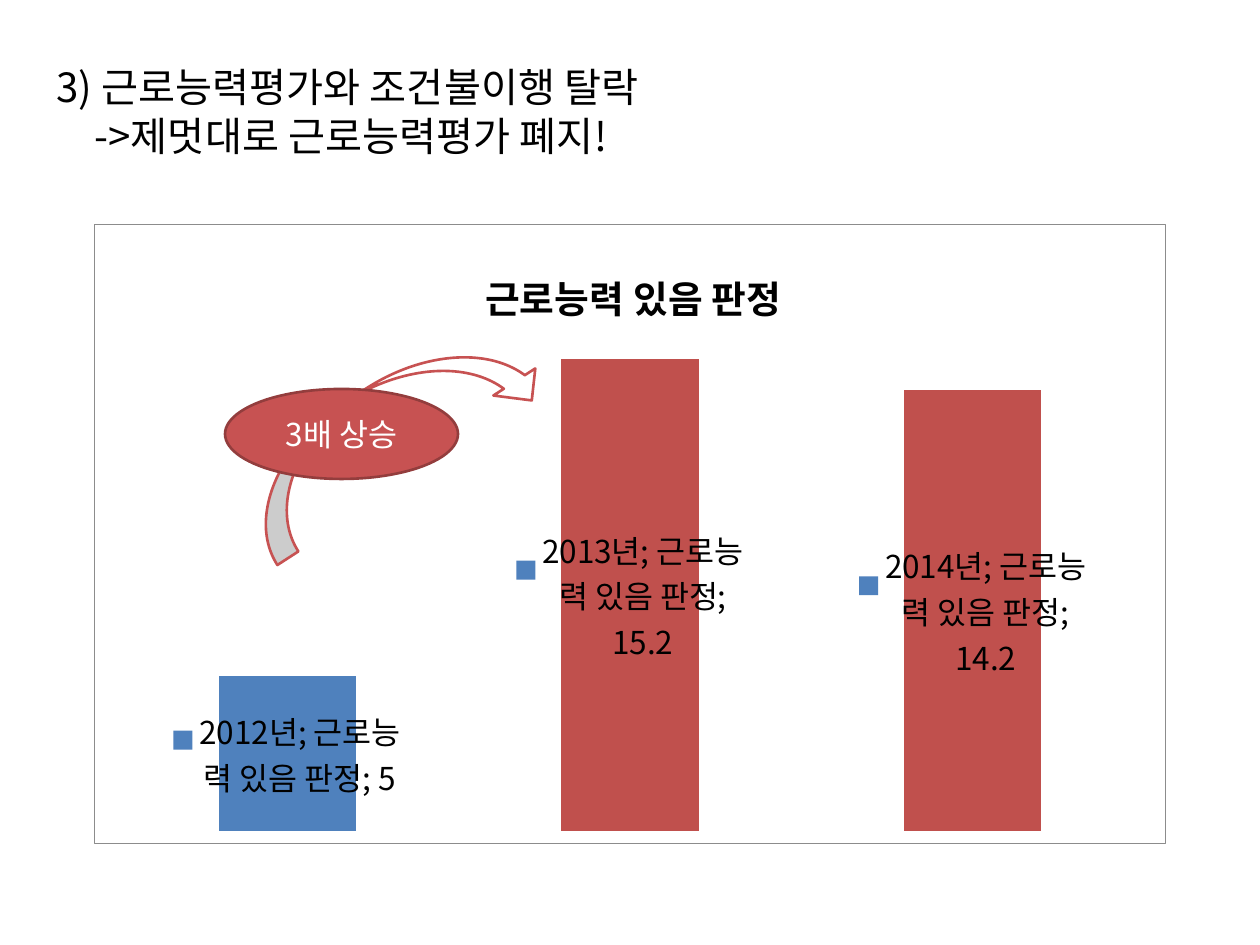
from dataclasses import dataclass

from lxml import etree
from pptx import Presentation, util as u
from pptx.chart.data import CategoryChartData
from pptx.dml.color import RGBColor
from pptx.enum import chart as ch, shapes, text
from pptx.oxml import parse_xml
from pptx.oxml.ns import nsdecls, qn


@dataclass(frozen=True)
class Theme:
    font: str = "Noto Sans CJK KR"
    ink: str = "000000"
    paper: str = "FFFFFF"
    frame: str = "8C8C8C"
    blue: str = "4F81BD"
    red: str = "C0504D"
    badge: str = "C75252"
    edge: str = "933D3D"
    head: float = 23
    title: float = 21.6
    label: float = 18
    base: float = 9


T = Theme()
HEAD = (44, 55, 1171, 111)
CHART = (94, 224, 1072, 620)


def px(n):
    return u.Emu(round(n * 914400 / 126))


def rgb(code):
    return RGBColor.from_string(code)


def style(font, size, color, bold=False):
    """Set Latin and East Asian face, size and colour."""
    font.name, font.size, font.bold = T.font, u.Pt(size), bold
    font.color.rgb = rgb(color)
    props = font._element
    for old in props.findall(qn("a:ea")):
        props.remove(old)
    east = etree.Element(qn("a:ea"), typeface=T.font)
    props.find(qn("a:latin")).addnext(east)


def paint(part, fill, line, width=1.5):
    part.fill.solid()
    part.fill.fore_color.rgb = rgb(fill)
    part.line.color.rgb = rgb(line)
    part.line.width = u.Pt(width)


def heading(slide, box):
    shape = slide.shapes.title
    shape.left, shape.top, shape.width, shape.height = map(px, box)
    frame = shape.text_frame
    frame.word_wrap = True
    frame.auto_size = text.MSO_AUTO_SIZE.NONE
    frame.vertical_anchor = text.MSO_ANCHOR.TOP
    frame.text = "3) 근로능력평가와 조건불이행 탈락\n->제멋대로 근로능력평가 폐지!"
    for para, indent in zip(frame.paragraphs, (0, 38)):
        para.alignment = text.PP_ALIGN.LEFT
        para.line_spacing = u.Pt(28)
        para._p.get_or_add_pPr().set("marL", str(px(indent)))
        style(para.runs[0].font, T.head, T.ink)


def layout(owner, index, box, spot, inner=False):
    """Fix a chart part at spot (px within box: x, y and maybe w, h)."""
    for old in owner.findall(qn("c:layout")):
        owner.remove(old)
    marks = [("layoutTarget", "inner")] if inner else []
    marks += [("xMode", "edge"), ("yMode", "edge")]
    sizes = (box[2], box[3]) * 2
    marks += [(k, round(n / s, 4)) for k, n, s in zip("xywh", spot, sizes)]
    body = "".join(f'<c:{k} val="{v}"/>' for k, v in marks)
    owner.insert(index, parse_xml(
        f'<c:layout {nsdecls("c")}><c:manualLayout>{body}'
        '</c:manualLayout></c:layout>'))


def title(chart, name, box):
    chart.has_title = True
    frame = chart.chart_title.text_frame
    frame.text = name
    style(frame.paragraphs[0].runs[0].font, T.title, T.ink, True)
    node = chart.chart_title._element
    layout(node, 1, box, (384, 33))
    node.find(qn("c:overlay")).set("val", "1")


def border(chart):
    chart._chartSpace.find(qn("c:chart")).addnext(parse_xml(
        f'<c:spPr {nsdecls("c", "a")}><a:noFill/><a:ln w="{u.Pt(0.75)}">'
        f'<a:solidFill><a:srgbClr val="{T.frame}"/></a:solidFill>'
        '</a:ln></c:spPr>'))


def labels(plot):
    plot.has_data_labels = True
    tags = plot.data_labels
    tags.show_value = tags.show_category_name = True
    tags.show_series_name = tags.show_legend_key = True
    tags.position = ch.XL_LABEL_POSITION.CENTER
    style(tags.font, T.label, T.ink)


def columns(slide, box):
    name = "근로능력 있음 판정"
    data = CategoryChartData()
    data.categories = ["2012년", "2013년", "2014년"]
    data.add_series(name, (5, 15.2, 14.2))
    chart = slide.shapes.add_chart(
        ch.XL_CHART_TYPE.COLUMN_STACKED, *map(px, box), data).chart
    style(chart.font, T.base, T.ink)
    chart.has_legend = False
    title(chart, name, box)
    border(chart)

    axis = chart.value_axis
    axis.minimum_scale, axis.maximum_scale = 0, 16
    axis.has_major_gridlines = False
    axis.visible = chart.category_axis.visible = False
    area = chart._chartSpace.find(".//" + qn("c:plotArea"))
    layout(area, 0, box, (21, 110, 1030, 498), True)

    plot = chart.plots[0]
    plot.gap_width, plot.overlap = 150, 100
    plot.vary_by_categories = False
    series = plot.series[0]
    for part, color in ((series, T.blue), (series.points[1], T.red),
                        (series.points[2], T.red)):
        part.format.fill.solid()
        part.format.fill.fore_color.rgb = rgb(color)
    labels(plot)


def callout(slide, box):
    """Curved arrow with an oval badge over it."""
    x, y = box[:2]
    kinds = shapes.MSO_SHAPE
    arrow = slide.shapes.add_shape(
        kinds.CURVED_DOWN_ARROW, *map(px, (x + 130, y + 160, 328, 100)))
    arrow.rotation = 327.1
    paint(arrow, T.paper, T.badge)
    badge = slide.shapes.add_shape(
        kinds.OVAL, *map(px, (x + 131, y + 165, 233, 90)))
    paint(badge, T.badge, T.edge)
    arrow.shadow.inherit = badge.shadow.inherit = False
    frame = badge.text_frame
    frame.text = "3배 상승"
    frame.vertical_anchor = text.MSO_ANCHOR.MIDDLE
    para = frame.paragraphs[0]
    para.alignment = text.PP_ALIGN.CENTER
    style(para.runs[0].font, T.label, T.paper)


def main():
    deck = Presentation()
    deck.slide_width, deck.slide_height = px(1260), px(945)
    slide = deck.slides.add_slide(deck.slide_layouts[5])
    heading(slide, HEAD)
    columns(slide, CHART)
    callout(slide, CHART)
    deck.save("out.pptx")


if __name__ == "__main__":
    main()
